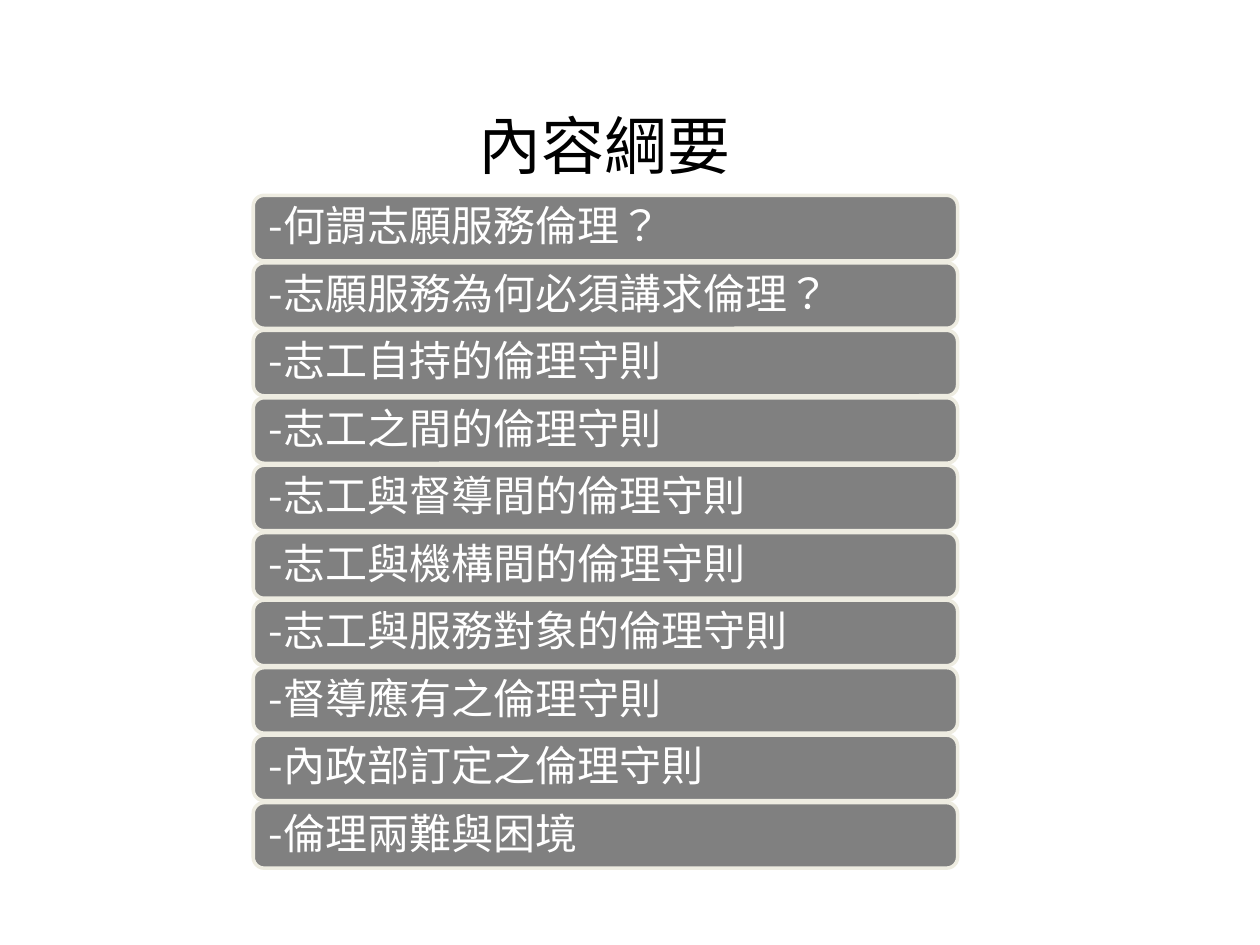
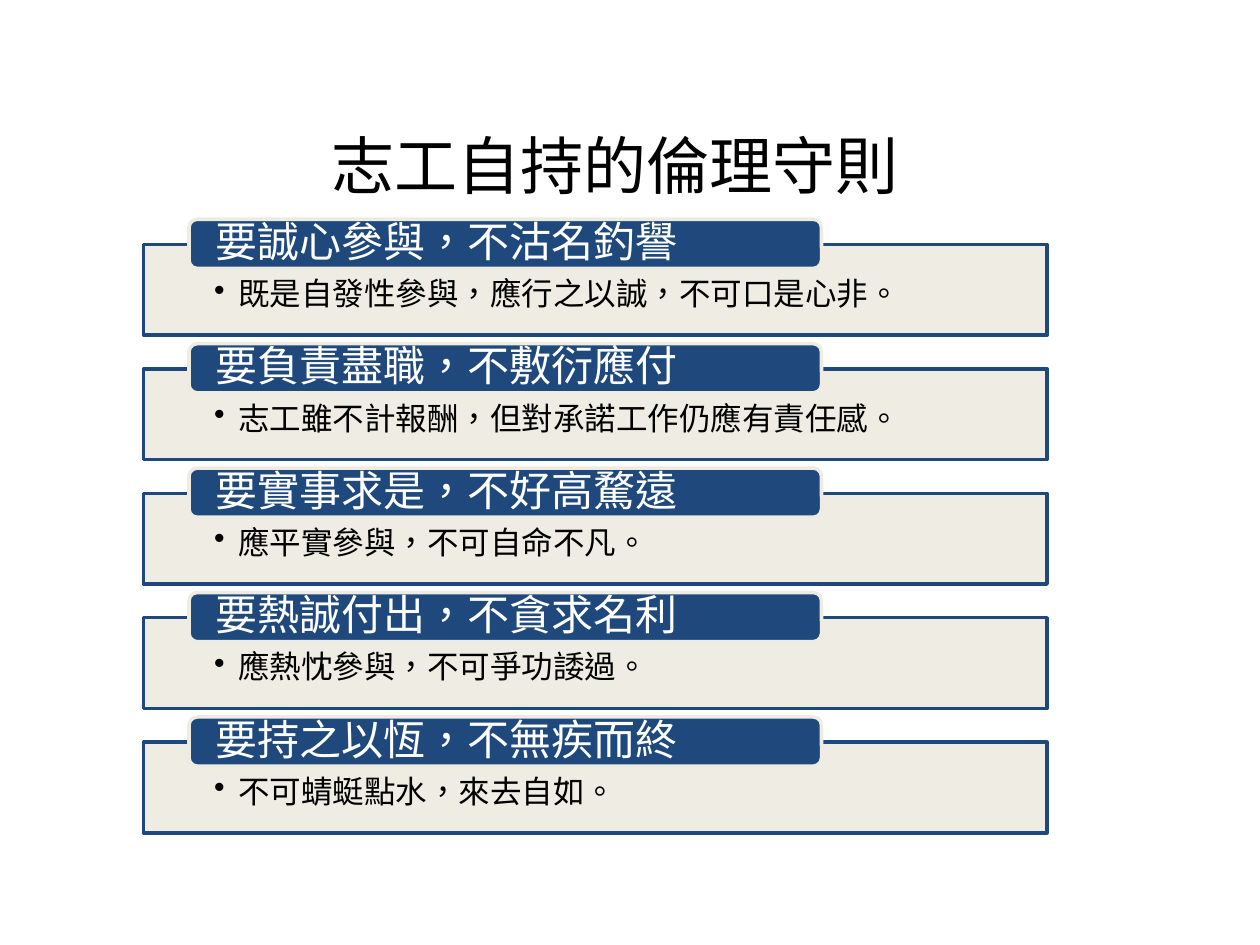
import pptx
import pptx.util
import pptx.dml.color
import pptx.enum.shapes
import pptx.enum.text
import lxml.etree
from pptx.oxml.ns import qn

Inches, Pt = pptx.util.Inches, pptx.util.Pt
SHAPE = pptx.enum.shapes.MSO_SHAPE
ALIGN = pptx.enum.text.PP_ALIGN
ANCHOR = pptx.enum.text.MSO_ANCHOR

# Shared look
CJK = "Noto Sans CJK SC"
BLACK, WHITE, GREY, NAVY, CREAM = "000000", "FFFFFF", "808080", "1F497D", "EEECE1"


def paint(target, color):
    """Give a fill or line one solid colour."""
    target.solid()
    target.fore_color.rgb = pptx.dml.color.RGBColor.from_string(color)


def write(slide, text, box, kind=None, fill=None, line=None, alpha=None, size=24,
          color=WHITE, font=CJK, align=ALIGN.LEFT, anchor=ANCHOR.MIDDLE,
          inset=(0.1, 0.1, 0.1, 0.1), space=0.9, bullet=False):
    """Add text in a plain box, or in a filled shape when kind is given."""
    place = [Inches(n) for n in box]
    if kind is None:
        shape = slide.shapes.add_textbox(*place)
    else:
        shape = slide.shapes.add_shape(kind, *place)
        shape.shadow.inherit = False
        paint(shape.fill, fill)
        paint(shape.line.fill, line)
        shape.line.width = Pt(2)
        if alpha:
            tint = shape.fill._xPr.find(qn("a:solidFill"))[0]
            lxml.etree.SubElement(tint, qn("a:alpha"), val=str(alpha * 1000))

    frame = shape.text_frame
    frame.word_wrap = True
    frame.vertical_anchor = anchor
    (frame.margin_left, frame.margin_top,
     frame.margin_right, frame.margin_bottom) = [Inches(n) for n in inset]

    para = frame.paragraphs[0]
    para.alignment = align
    para.line_spacing = space
    if bullet:
        props = para._p.get_or_add_pPr()
        props.set("marL", str(Inches(0.19)))
        props.set("indent", str(Inches(-0.19)))
        lxml.etree.SubElement(props, qn("a:buChar"), char="•")

    run = para.add_run()
    run.text = text
    run.font.size = Pt(size)
    run.font.name = font
    paint(run.font.fill, color)
    props = run._r.get_or_add_rPr()
    props.set("lang", "zh-TW")
    lxml.etree.SubElement(props, qn("a:ea"), typeface=CJK)


deck = pptx.Presentation()
deck.slide_width, deck.slide_height = Inches(10), Inches(7.5)
blank = deck.slide_layouts[6]
title = dict(size=36, color=BLACK, font="Calibri", align=ALIGN.CENTER,
             inset=(0.1, 0.05, 0.1, 0.05), space=1.0)

# Slide 1: outline
slide = deck.slides.add_slide(blank)
write(slide, "內容綱要", (0.43, 0.52, 8.74, 1.25), **title)
topics = [
    "何謂志願服務倫理？",
    "志願服務為何必須講求倫理？",
    "志工自持的倫理守則",
    "志工之間的倫理守則",
    "志工與督導間的倫理守則",
    "志工與機構間的倫理守則",
    "志工與服務對象的倫理守則",
    "督導應有之倫理守則",
    "內政部訂定之倫理守則",
    "倫理兩難與困境",
]
step = (6.37 - 1.55) / (len(topics) - 1)
for row, topic in enumerate(topics):
    write(slide, "-" + topic, (2.01, 1.55 + row * step, 5.59, 0.52),
          kind=SHAPE.ROUNDED_RECTANGLE, fill=GREY, line=CREAM)

# Slide 2: rules, each a heading tab over a panel
slide = deck.slides.add_slide(blank)
write(slide, "志工自持的倫理守則", (0.51, 0.68, 8.74, 1.25), **title)
rules = [
    ("要誠心參與，不沽名釣譽", "既是自發性參與，應行之以誠，不可口是心非。"),
    ("要負責盡職，不敷衍應付", "志工雖不計報酬，但對承諾工作仍應有責任感。"),
    ("要實事求是，不好高騖遠", "應平實參與，不可自命不凡。"),
    ("要熱誠付出，不貪求名利", "應熱忱參與，不可爭功諉過。"),
    ("要持之以恆，不無疾而終", "不可蜻蜓點水，來去自如。"),
]
step = (5.89 - 1.94) / (len(rules) - 1)
for row, (head, note) in enumerate(rules):
    top = 1.94 + row * step
    write(slide, note, (1.14, top, 7.17, 0.72), kind=SHAPE.RECTANGLE,
          fill=CREAM, line=NAVY, alpha=90, size=18, color=BLACK,
          anchor=ANCHOR.TOP, inset=(0.56, 0.27, 0.56, 0.14), bullet=True)
    write(slide, head, (1.5, top - 0.2, 5.02, 0.39),
          kind=SHAPE.ROUNDED_RECTANGLE, fill=NAVY, line=CREAM,
          inset=(0.19, 0, 0.19, 0))

deck.save("out.pptx")
